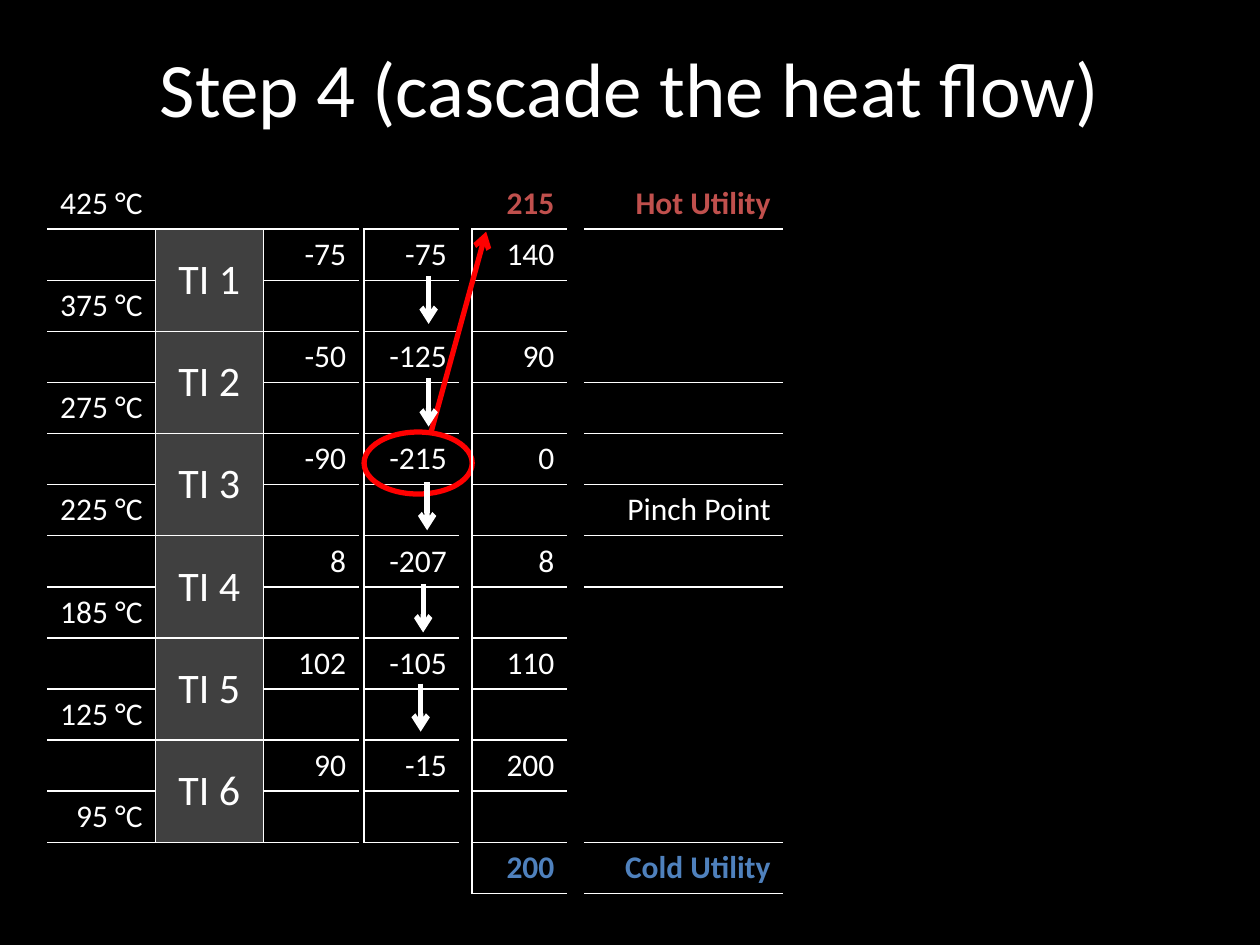
from lxml import etree
from pptx import Presentation
from pptx.dml.color import RGBColor
from pptx.enum.shapes import MSO_CONNECTOR, MSO_SHAPE
from pptx.enum.text import MSO_ANCHOR, PP_ALIGN
from pptx.oxml.ns import qn
from pptx.util import Cm, Pt

STRAIGHT = MSO_CONNECTOR.STRAIGHT
ELLIPSE = MSO_SHAPE.OVAL
MIDDLE = MSO_ANCHOR.MIDDLE
CENTER, RIGHT = PP_ALIGN.CENTER, PP_ALIGN.RIGHT

FONT = "Calibri"
BLACK, WHITE, GREY, RED = "000000", "FFFFFF", "404040", "FF0000"
HOT, COLD = "C0504D", "4F81BD"
NO_STYLE = "{2D5ABB26-0587-4C30-8999-92F81FD0307C}"
TOP, ROW = 3.59, 1.03
NET_LEFT, NET_WIDTH = 7.34, 1.92

color = RGBColor.from_string


def add_plain_table(left, widths, heights):
    """Add a table without style or fill, sized in centimetres."""
    frame = slide.shapes.add_table(len(heights), len(widths), Cm(left), Cm(TOP),
                                   Cm(sum(widths)), Cm(sum(heights)))
    table = frame.table
    table.first_row = table.horz_banding = False
    table._tbl.tblPr.find(qn("a:tableStyleId")).text = NO_STYLE
    for column, width in zip(table.columns, widths):
        column.width = Cm(width)
    for row, height in zip(table.rows, heights):
        row.height = Cm(height)
    return table


def format_cell(cell, text="", edges="", ink=WHITE, size=18, align=RIGHT, fill=None):
    """Write the text and draw the edges, named in the order L, R, T, B."""
    properties = cell._tc.get_or_add_tcPr()
    for edge in edges:
        line = etree.SubElement(properties, qn("a:ln" + edge), w=str(Pt(1)))
        solid = etree.SubElement(line, qn("a:solidFill"))
        etree.SubElement(solid, qn("a:srgbClr"), val=WHITE)
    if fill:
        cell.fill.solid()
        cell.fill.fore_color.rgb = color(fill)
    else:
        cell.fill.background()
    para = cell.text_frame.paragraphs[0]
    para.alignment = align
    if text:
        span = para.add_run()
        span.text = text
        span.font.name = FONT
        span.font.size = Pt(size)
        span.font.bold = ink != WHITE
        span.font.color.rgb = color(ink)


deck = Presentation()
deck.slide_width, deck.slide_height = Cm(25.4), Cm(19.05)
slide = deck.slides.add_slide(deck.slide_layouts[5])
slide.background.fill.solid()
slide.background.fill.fore_color.rgb = color(BLACK)

title = slide.shapes.title
title.left, title.top, title.width, title.height = Cm(1.27), Cm(0.16), Cm(22.86), Cm(3.18)
title.text_frame.vertical_anchor = MIDDLE
para = title.text_frame.paragraphs[0]
para.alignment = CENTER
span = para.add_run()
span.text = "Step 4 (cascade the heat flow)"
span.font.name = FONT
span.font.size = Pt(44)
span.font.color.rgb = color(WHITE)

# Each interval takes two rows below the heading row.
temperatures = [425, 375, 275, 225, 185, 125, 95]
interval_heat = [-75, -50, -90, 8, 102, 90]
cascade = [-75, -125, -215, -207, -105, -15]
corrected = [140, 90, 0, 8, 110, 200]
row_count = 1 + 2 * len(interval_heat)

# Running total of the heat flow
cascade_table = add_plain_table(NET_LEFT, [NET_WIDTH], [ROW] * row_count)
format_cell(cascade_table.cell(0, 0), edges="B")
for index, value in enumerate(cascade):
    format_cell(cascade_table.cell(2 * index + 1, 0), str(value), "LT")
    format_cell(cascade_table.cell(2 * index + 2, 0), edges="LB")

# Arrow that carries the largest deficit to the hot utility
arrows = [(8.69, 8.71, 9.8, 4.67, RED)]
for x, y in [(8.64, 5.56), (8.64, 7.63), (8.61, 9.72), (8.53, 11.78), (8.48, 13.78)]:
    arrows.append((x, y, x, y + 0.97, WHITE))

# Temperature intervals
interval_table = add_plain_table(0.95, [2.18, 2.18, 1.92], [ROW] * row_count)
format_cell(interval_table.cell(0, 0), f"{temperatures[0]} °C", "B")
format_cell(interval_table.cell(0, 1), edges="B")
format_cell(interval_table.cell(0, 2), edges="B")
for index, value in enumerate(interval_heat):
    upper, lower = 2 * index + 1, 2 * index + 2
    format_cell(interval_table.cell(upper, 0), edges="RT")
    format_cell(interval_table.cell(lower, 0), f"{temperatures[index + 1]} °C", "RB")
    label = interval_table.cell(upper, 1)
    label.merge(interval_table.cell(lower, 1))
    label.vertical_anchor = MIDDLE
    format_cell(label, f"TI {index + 1}", "LRTB", size=24, align=CENTER, fill=GREY)
    format_cell(interval_table.cell(upper, 2), str(value), "LT")
    format_cell(interval_table.cell(lower, 2), edges="LB")

deficit_ring = slide.shapes.add_shape(ELLIPSE, Cm(NET_LEFT), Cm(8.71), Cm(2.18), Cm(1.25))
deficit_ring.shadow.inherit = False
deficit_ring.fill.background()
deficit_ring.line.color.rgb = color(RED)
deficit_ring.line.width = Pt(3)

# Heat flow corrected by the hot utility
corrected_table = add_plain_table(9.51, [NET_WIDTH], [ROW] * (row_count + 1))
format_cell(corrected_table.cell(0, 0), "215", "B", HOT)
for index, value in enumerate(corrected):
    format_cell(corrected_table.cell(2 * index + 1, 0), str(value), "LT")
    format_cell(corrected_table.cell(2 * index + 2, 0), edges="LB")
format_cell(corrected_table.cell(row_count, 0), "200", "LTB", COLD)

# Names of the utilities and the pinch
notes = [
    (1, "Hot Utility", "B", HOT),
    (3, "", "T", WHITE),
    (1, "", "B", WHITE),
    (1, "", "T", WHITE),
    (1, "Pinch Point", "B", WHITE),
    (1, "", "T", WHITE),
    (4, "", "", WHITE),
    (1, "", "B", WHITE),
    (1, "Cold Utility", "TB", COLD),
]
note_table = add_plain_table(11.78, [4.01], [ROW * note[0] for note in notes])
for index, (rows, text, edges, ink) in enumerate(notes):
    format_cell(note_table.cell(index, 0), text, edges, ink)

for x1, y1, x2, y2, ink in arrows:
    arrow = slide.shapes.add_connector(STRAIGHT, Cm(x1), Cm(y1), Cm(x2), Cm(y2))
    arrow.line.color.rgb = color(ink)
    arrow.line.width = Pt(3)
    etree.SubElement(arrow.line._get_or_add_ln(), qn("a:tailEnd"), type="arrow")
    etree.SubElement(arrow._element.spPr, qn("a:effectLst"))

deck.save("out.pptx")
